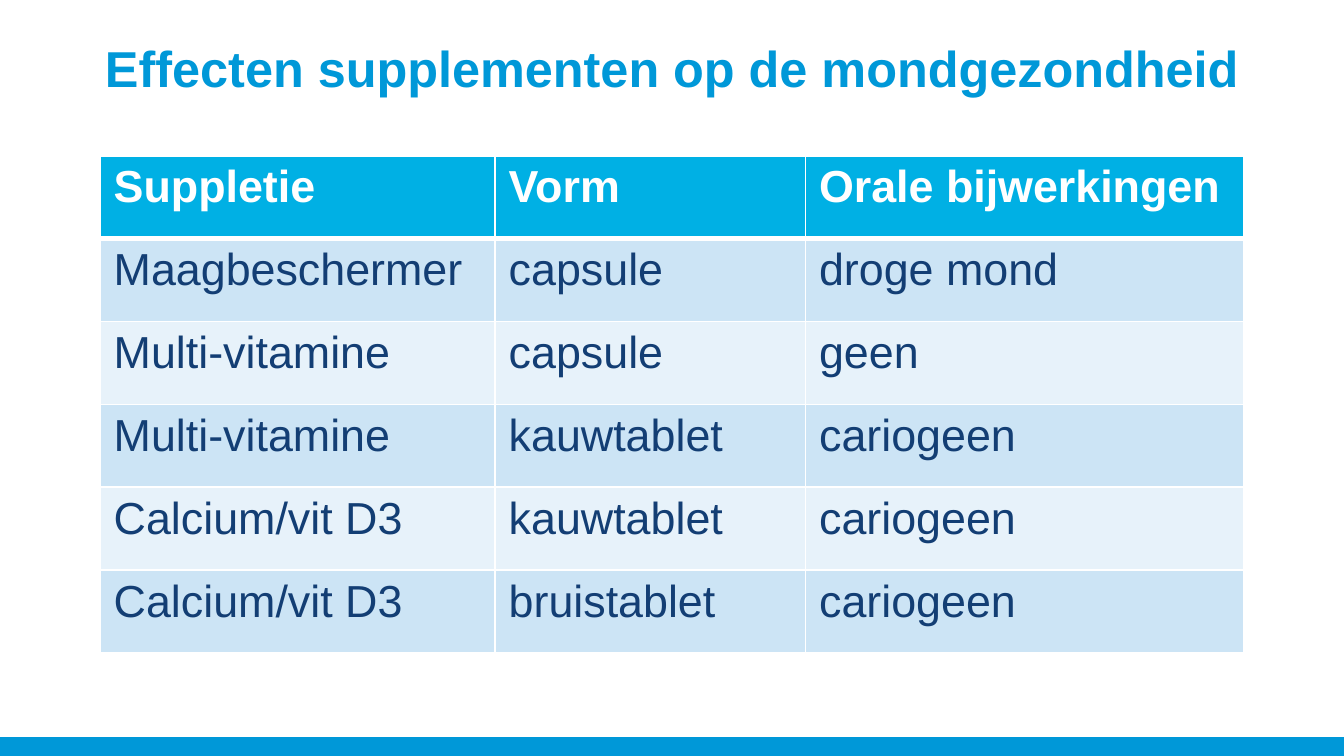
from lxml import etree
from pptx import Presentation
from pptx import util as u
from pptx.dml import color
from pptx.enum import shapes, text
from pptx.oxml import ns

COLORS = {
    "title": "0098D8",
    "header": "00B0E4",
    "body_text": "133E74",
    "odd_row": "CCE4F5",
    "even_row": "E7F2FA",
    "white": "FFFFFF",
}
FONT = "Arial"
SLIDE_WIDTH = u.Inches(10)
SLIDE_HEIGHT = u.Emu(SLIDE_WIDTH * 9 // 16)
COLUMN_WIDTHS = (2.94, 2.31, 3.26)
ROWS = (
    ("Suppletie", "Vorm", "Orale bijwerkingen"),
    ("Maagbeschermer", "capsule", "droge mond"),
    ("Multi-vitamine", "capsule", "geen"),
    ("Multi-vitamine", "kauwtablet", "cariogeen"),
    ("Calcium/vit D3", "kauwtablet", "cariogeen"),
    ("Calcium/vit D3", "bruistablet", "cariogeen"),
)


def rgb(name):
    return color.RGBColor.from_string(COLORS[name])


def percent_box(left, top, width, height):
    return (
        int(SLIDE_WIDTH * left / 100),
        int(SLIDE_HEIGHT * top / 100),
        int(SLIDE_WIDTH * width / 100),
        int(SLIDE_HEIGHT * height / 100),
    )


def format_run(run, size, color_name, bold):
    run.font.name = FONT
    run.font.size = u.Pt(size)
    run.font.bold = bold
    run.font.color.rgb = rgb(color_name)


def set_borders(cell, top, bottom):
    properties = cell._tc.get_or_add_tcPr()
    for side, points in (("L", 1), ("R", 1), ("T", top), ("B", bottom)):
        line = etree.SubElement(properties, ns.qn(f"a:ln{side}"), w=str(u.Pt(points)))
        fill = etree.SubElement(line, ns.qn("a:solidFill"))
        etree.SubElement(fill, ns.qn("a:srgbClr"), val=COLORS["white"])


def add_footer_bar(slide, box):
    bar = slide.shapes.add_shape(shapes.MSO_SHAPE.RECTANGLE, *box)
    bar.shadow.inherit = False
    bar.fill.solid()
    bar.fill.fore_color.rgb = rgb("title")
    bar.line.fill.background()


def add_title(slide, box):
    title = slide.shapes.title
    title.left, title.top, title.width, title.height = box
    frame = title.text_frame
    frame.text = "Effecten supplementen op de mondgezondheid"
    frame.word_wrap = True
    frame.auto_size = text.MSO_AUTO_SIZE.NONE
    frame.vertical_anchor = text.MSO_ANCHOR.TOP
    paragraph = frame.paragraphs[0]
    paragraph.alignment = text.PP_ALIGN.CENTER
    format_run(paragraph.runs[0], 27, "title", True)


def fill_cell(cell, wording, row_index):
    is_header = row_index == 0
    set_borders(cell, 3 if row_index == 1 else 1, 3 if is_header else 1)
    row_color = "header" if is_header else "odd_row" if row_index % 2 else "even_row"
    cell.fill.solid()
    cell.fill.fore_color.rgb = rgb(row_color)
    cell.text_frame.text = wording
    run = cell.text_frame.paragraphs[0].runs[0]
    format_run(run, 24, "white" if is_header else "body_text", is_header)


def add_supplement_table(slide, box):
    table = slide.shapes.add_table(len(ROWS), len(COLUMN_WIDTHS), *box).table
    for column, share in zip(table.columns, COLUMN_WIDTHS):
        column.width = int(box[2] * share / sum(COLUMN_WIDTHS))
    for row_index, wordings in enumerate(ROWS):
        for column_index, wording in enumerate(wordings):
            fill_cell(table.cell(row_index, column_index), wording, row_index)


def main():
    presentation = Presentation()
    presentation.slide_width = SLIDE_WIDTH
    presentation.slide_height = SLIDE_HEIGHT
    slide = presentation.slides.add_slide(presentation.slide_layouts[5])
    add_footer_bar(slide, percent_box(0, 97.5, 100, 2.5))
    add_title(slide, percent_box(3.55, 4, 92.9, 15.1))
    add_supplement_table(slide, percent_box(7.46, 20.6, 85.08, 65.8))
    presentation.save("out.pptx")


if __name__ == "__main__":
    main()
